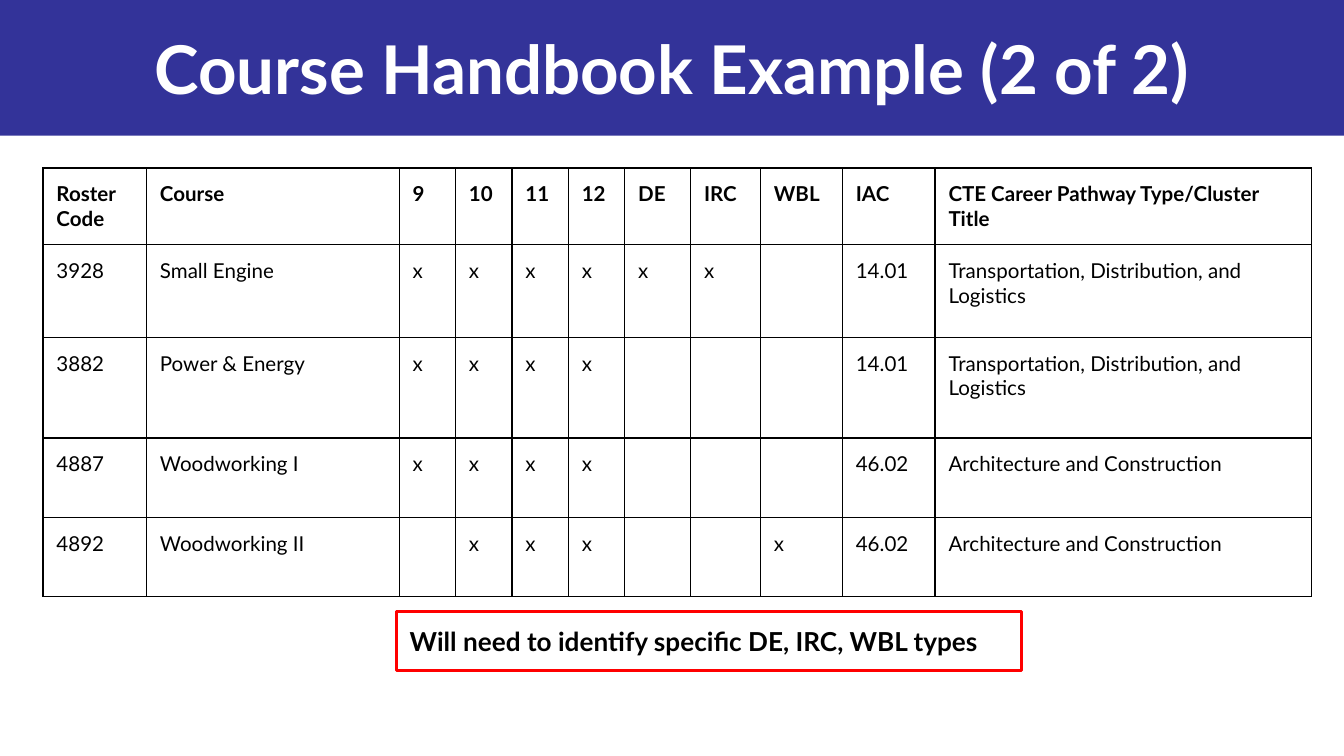
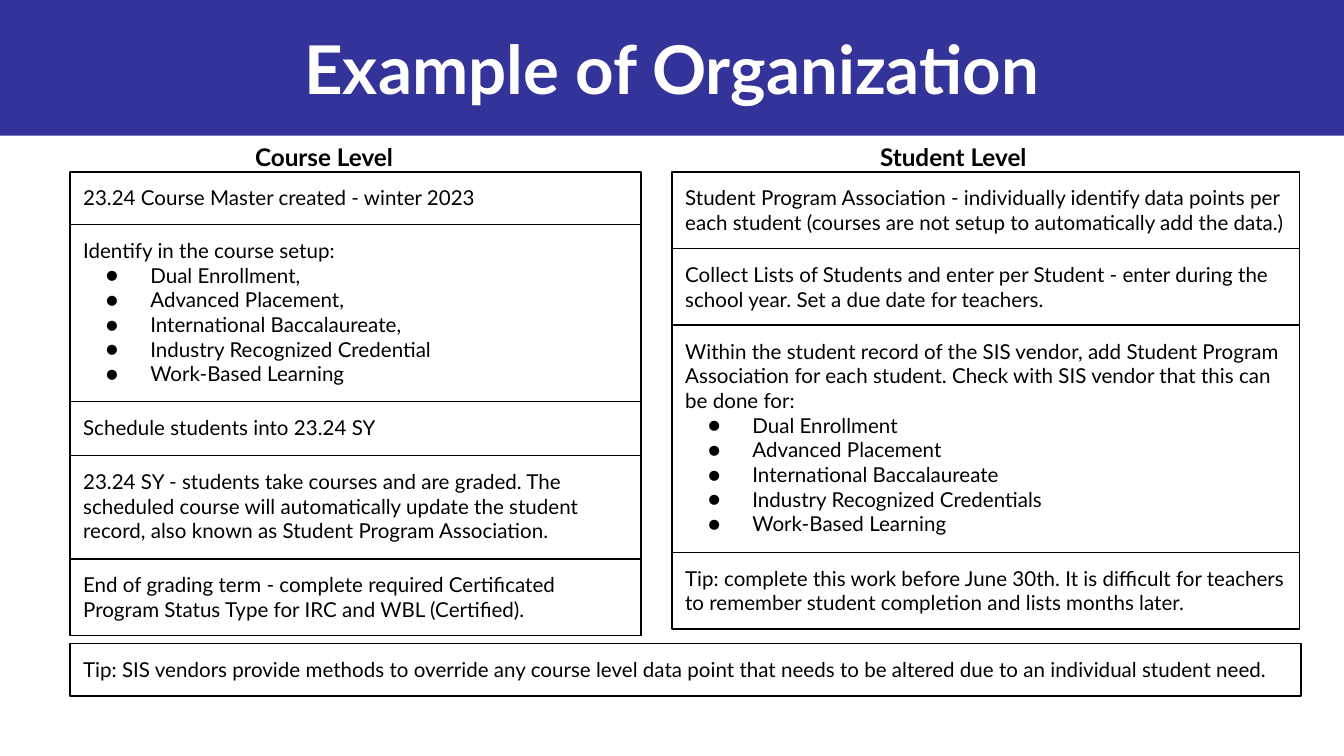
import lxml.etree
import pptx
import pptx.dml.color
import pptx.enum.shapes
import pptx.enum.text
import pptx.oxml.ns
import pptx.util

Inches = pptx.util.Inches
Pt = pptx.util.Pt
qn = pptx.oxml.ns.qn
PP_ALIGN = pptx.enum.text.PP_ALIGN
MSO_ANCHOR = pptx.enum.text.MSO_ANCHOR
RECT = pptx.enum.shapes.MSO_SHAPE.RECTANGLE

# Shared style
SLIDE_WIDTH = 10
SLIDE_HEIGHT = SLIDE_WIDTH * 9 / 16
FONT = "Lato"
COLORS = {"band": "333399", "paper": "FFFFFF", "ink": "000000", "alert": "FF0000"}
BODY_SIZE = 11
PAD = 0.1

# Slide 1 content
COLUMN_WIDTHS = [0.77, 1.88, 0.42, 0.42, 0.42, 0.42, 0.49, 0.52, 0.61, 0.69, 2.8]
ROW_HEIGHTS = [0.57, 0.69, 0.75, 0.59, 0.59]
TRANSPORT = "Transportation, Distribution, and Logistics"
CONSTRUCTION = "Architecture and Construction"
COURSES = [
    ["Roster Code", "Course", "9", "10", "11", "12", "DE", "IRC", "WBL", "IAC",
     "CTE Career Pathway Type/Cluster Title"],
    ["3928", "Small Engine", *"xxxxxx", "", "14.01", TRANSPORT],
    ["3882", "Power & Energy", *"xxxx", "", "", "", "14.01", TRANSPORT],
    ["4887", "Woodworking I", *"xxxx", "", "", "", "46.02", CONSTRUCTION],
    ["4892", "Woodworking II", "", *"xxx", "", "", "x", "46.02", CONSTRUCTION],
]

# Slide 2 content: (height, text, bullets) for each stacked box
COURSE_STEPS = [
    (0.39, "23.24 Course Master created - winter 2023", []),
    (1.32, "Identify in the course setup:",
     ["Dual Enrollment,", "Advanced Placement,", "International Baccalaureate,",
      "Industry Recognized Credential", "Work-Based Learning"]),
    (0.4, "Schedule students into 23.24 SY", []),
    (0.77, "23.24 SY - students take courses and are graded. The scheduled course will "
     "automatically update the student record, also known as Student Program Association.", []),
    (0.57, "End of grading term - complete required Certificated Program Status Type "
     "for IRC and WBL (Certified).", []),
]
STUDENT_STEPS = [
    (0.57, "Student Program Association - individually identify data points per each student "
     "(courses are not setup to automatically add the data.)", []),
    (0.57, "Collect Lists of Students and enter per Student - enter during the school year. "
     "Set a due date for teachers.", []),
    (1.69, "Within the student record of the SIS vendor, add Student Program Association for "
     "each student. Check with SIS vendor that this can be done for:",
     ["Dual Enrollment", "Advanced Placement", "International Baccalaureate",
      "Industry Recognized Credentials", "Work-Based Learning"]),
    (0.57, "Tip: complete this work before June 30th. It is difficult for teachers to remember "
     "student completion and lists months later.", []),
]
OVERRIDE_TIP = ("Tip: SIS vendors provide methods to override any course level data point that "
                "needs to be altered due to an individual student need.")


def rgb(name):
    return pptx.dml.color.RGBColor.from_string(COLORS[name])


def add_run(p, text, size=BODY_SIZE, bold=False, color="ink"):
    r = p.add_run()
    r.text = text
    r.font.name = FONT
    r.font.size = Pt(size)
    r.font.bold = bold
    r.font.color.rgb = rgb(color)


def add_color(parent, name):
    lxml.etree.SubElement(parent, qn("a:srgbClr"), val=COLORS[name])


def set_bullet(p):
    pPr = p._p.get_or_add_pPr()
    pPr.set("marL", str(Inches(0.5)))
    pPr.set("indent", str(Inches(-0.33)))
    add_color(lxml.etree.SubElement(pPr, qn("a:buClr")), "ink")
    lxml.etree.SubElement(pPr, qn("a:buSzPts"), val=str(BODY_SIZE * 100))
    lxml.etree.SubElement(pPr, qn("a:buFont"), typeface=FONT)
    lxml.etree.SubElement(pPr, qn("a:buChar"), char="●")


def set_margins(item, side=PAD, end=PAD):
    item.margin_left = item.margin_right = Inches(side)
    item.margin_top = item.margin_bottom = Inches(end)


def add_title(slide, text):
    # Band
    sp = slide.shapes.add_shape(RECT, Inches(-0.01), 0, Inches(10.01), Inches(1.01))
    sp.shadow.inherit = False
    sp.fill.solid()
    sp.fill.fore_color.rgb = rgb("band")
    sp.line.fill.background()
    # Title text
    tf = slide.shapes.add_textbox(0, 0, Inches(SLIDE_WIDTH), Inches(1.01)).text_frame
    tf.word_wrap = True
    tf.vertical_anchor = MSO_ANCHOR.MIDDLE
    set_margins(tf, end=0.05)
    p = tf.paragraphs[0]
    p.alignment = PP_ALIGN.CENTER
    add_run(p, text, 36, True, "paper")


def add_box(slide, x, y, w, h, text, bullets=(), size=BODY_SIZE, bold=False,
            line="ink", weight=0.75):
    sp = slide.shapes.add_shape(RECT, Inches(x), Inches(y), Inches(w), Inches(h))
    sp.shadow.inherit = False
    sp.fill.background()
    sp.line.color.rgb = rgb(line)
    sp.line.width = Pt(weight)
    tf = sp.text_frame
    tf.word_wrap = True
    tf.vertical_anchor = MSO_ANCHOR.TOP
    set_margins(tf)
    p = tf.paragraphs[0]
    p.alignment = PP_ALIGN.LEFT
    add_run(p, text, size, bold)
    for bullet in bullets:
        p = tf.add_paragraph()
        p.alignment = PP_ALIGN.LEFT
        set_bullet(p)
        add_run(p, bullet, size, bold)


def add_stack(slide, x, y, w, steps):
    for h, text, bullets in steps:
        add_box(slide, x, y, w, h, text, bullets)
        y += h


def add_heading(slide, x, w, text):
    tf = slide.shapes.add_textbox(Inches(x), Inches(0.96), Inches(w), Inches(0.42)).text_frame
    tf.word_wrap = True
    set_margins(tf)
    add_run(tf.paragraphs[0], text, 13, True)


def set_borders(cell):
    tcPr = cell._tc.get_or_add_tcPr()
    for side in ("lnL", "lnR", "lnT", "lnB"):
        ln = lxml.etree.SubElement(tcPr, qn("a:" + side), w=str(Pt(0.75)))
        add_color(lxml.etree.SubElement(ln, qn("a:solidFill")), "ink")


def add_course_table(slide, x, y):
    table = slide.shapes.add_table(
        len(ROW_HEIGHTS), len(COLUMN_WIDTHS), Inches(x), Inches(y),
        Inches(sum(COLUMN_WIDTHS)), Inches(sum(ROW_HEIGHTS))).table
    table.first_row = table.horz_banding = False
    for column, width in zip(table.columns, COLUMN_WIDTHS):
        column.width = Inches(width)
    for i, (row, height) in enumerate(zip(table.rows, ROW_HEIGHTS)):
        row.height = Inches(height)
        for cell, text in zip(row.cells, COURSES[i]):
            set_margins(cell)
            set_borders(cell)
            cell.fill.background()
            if text:
                add_run(cell.text_frame.paragraphs[0], text, bold=i == 0)


def build_handbook(slide):
    add_title(slide, "Course Handbook Example (2 of 2)")
    add_course_table(slide, 0.32, 1.25)
    add_box(slide, 2.95, 4.55, 4.65, 0.44, "Will need to identify specific DE, IRC, WBL types",
            size=14, bold=True, line="alert", weight=1.5)


def build_organization(slide):
    add_title(slide, "Example of Organization")
    add_heading(slide, 1.8, 1.42, "Course Level")
    add_stack(slide, 0.52, 1.28, 4.25, COURSE_STEPS)
    add_heading(slide, 6.45, 1.58, "Student Level")
    add_stack(slide, 5, 1.28, 4.67, STUDENT_STEPS)
    add_box(slide, 0.52, 4.79, 9.16, 0.39, OVERRIDE_TIP)


def main():
    prs = pptx.Presentation()
    prs.slide_width = Inches(SLIDE_WIDTH)
    prs.slide_height = Inches(SLIDE_HEIGHT)
    for build in (build_handbook, build_organization):
        build(prs.slides.add_slide(prs.slide_layouts[6]))
    prs.save("out.pptx")


if __name__ == "__main__":
    main()
